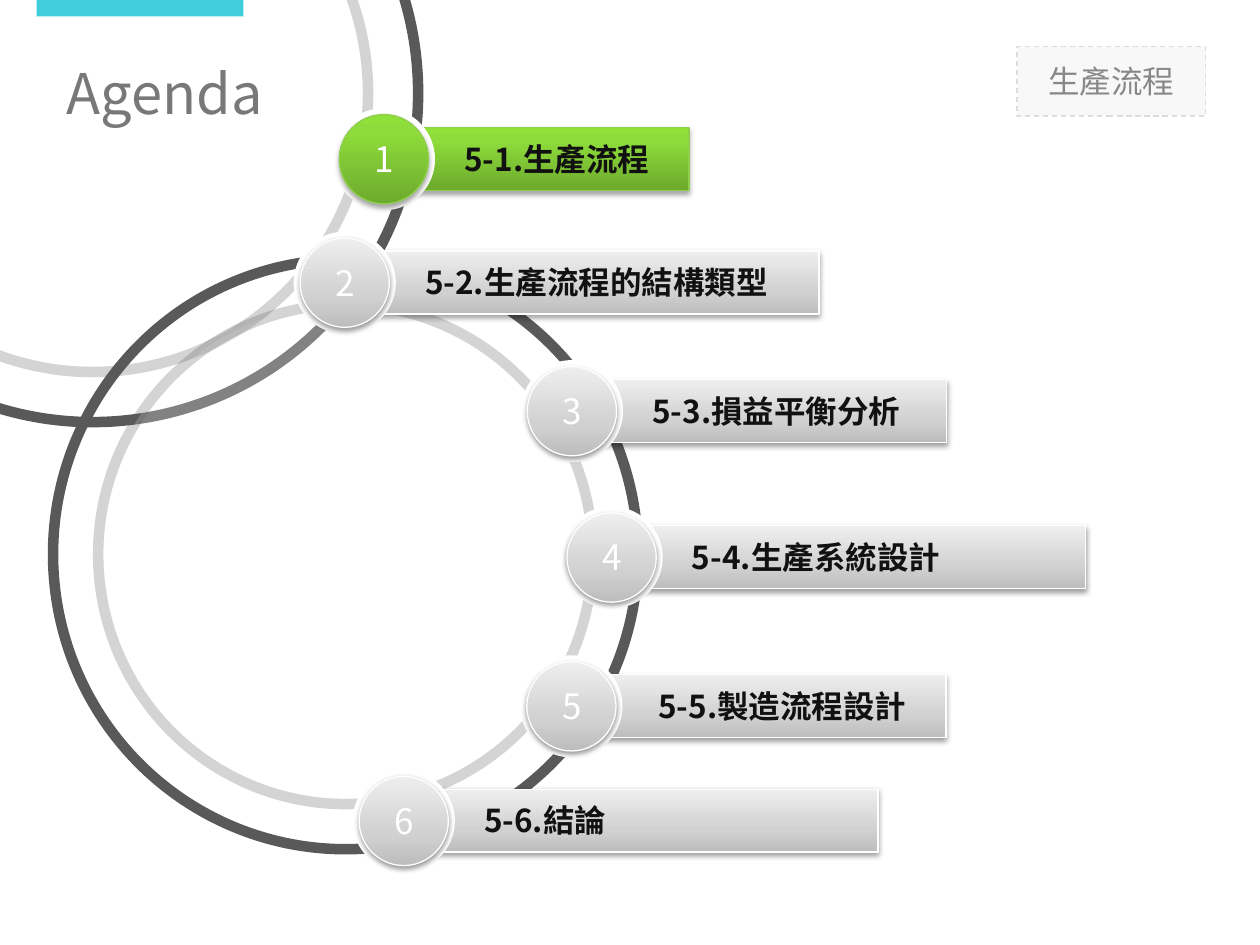
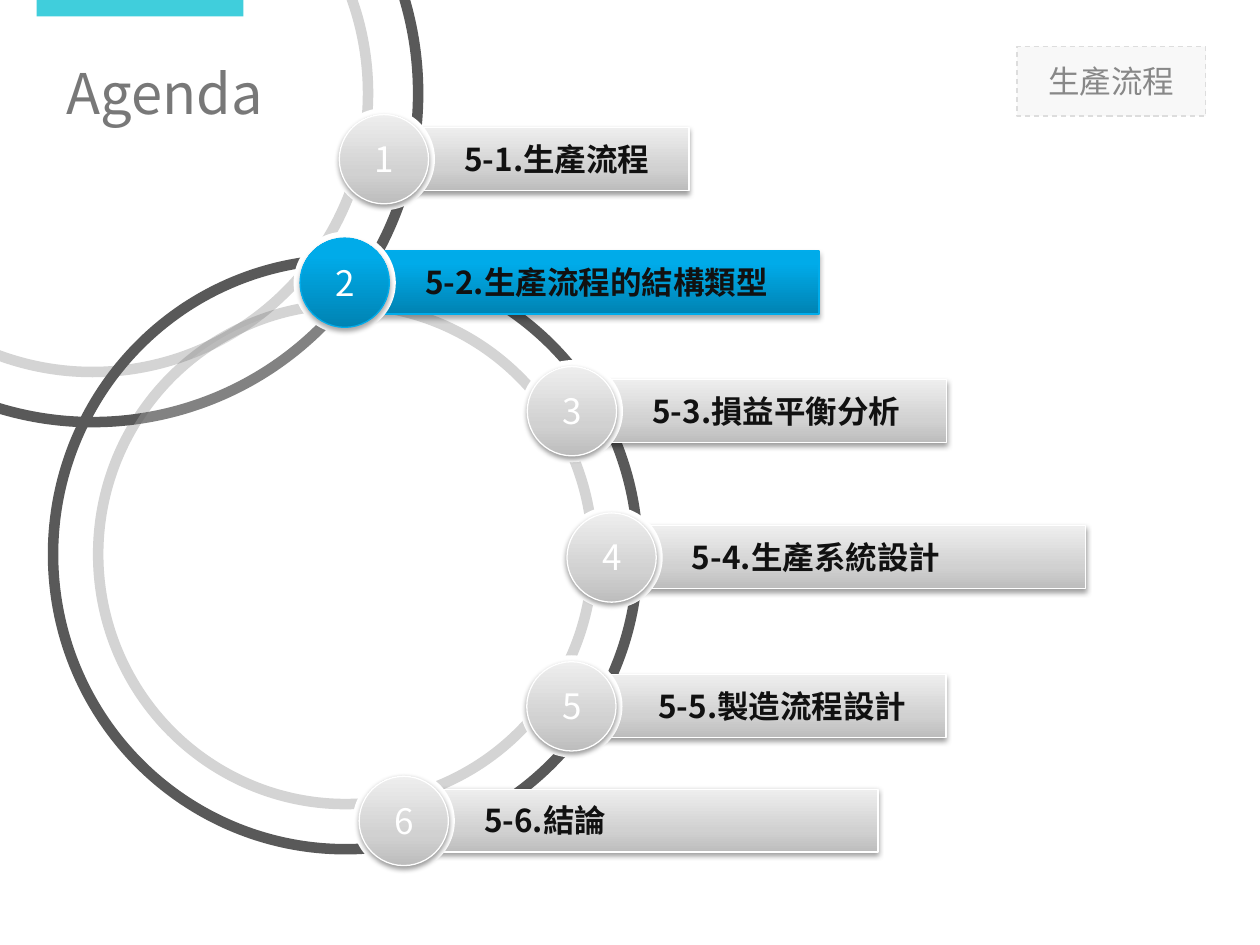
from lxml import etree
from pptx import Presentation
from pptx.dml.color import RGBColor
from pptx.enum.dml import MSO_LINE
from pptx.enum.shapes import MSO_SHAPE
from pptx.enum.text import MSO_ANCHOR, MSO_AUTO_SIZE, PP_ALIGN
from pptx.oxml.ns import qn
from pptx.util import Cm, Pt

RECT, OVAL = MSO_SHAPE.RECTANGLE, MSO_SHAPE.OVAL
LEFT, CENTER = PP_ALIGN.LEFT, PP_ALIGN.CENTER
MIDDLE, GROW, DASH = MSO_ANCHOR.MIDDLE, MSO_AUTO_SIZE.SHAPE_TO_FIT_TEXT, MSO_LINE.DASH
TITLE_ONLY = 5

FONT = "Noto Sans CJK SC"
INK, WHITE, MUTED = "111111", "FFFFFF", "888888"
ACCENT, RING = "00BED1", "595959"
TAG_FILL, TAG_LINE = "F8F8F8", "DDDDDD"

# Each style: gradient stops, outline, shadow opacity in %, shadow distance in pt
GRAY = ([(0, "BDBDBD"), (35, "D1D1D1"), (100, "EEEEEE")], WHITE, 38, 1.6)
GREEN = ([(0, "6DAA2D"), (80, "8EDC3B"), (100, "8FE038")], "8FCF4B", 35, 1.8)
BLUE = ([(0, "0083B3"), (80, "00ABE9"), (100, "00ABEA")], "00ACEB", 35, 1.8)

# Outer circle box and distance to the inner circle, in cm
RINGS = [((-4.7, -4.75, 13.13, 13.26), 1.01), ((1.07, 5.23, 11.79, 11.89), 0.91)]

# Label, left, top, bar width, label width, extra label indent, in cm
CHAPTERS = [
    ("5-1.生產流程", 6.71, 2.18, 5.99, 5.31, 0),
    ("5-2.生產流程的結構類型", 5.92, 4.67, 9.4, 7.75, 0),
    ("5-3.損益平衡分析", 10.5, 7.26, 7.39, 6.78, 0),
    ("5-4.生產系統設計", 11.3, 10.21, 9.4, 7.75, 0),
    ("5-5.製造流程設計", 10.49, 13.21, 7.39, 6.78, 0.13),
    ("5-6.結論", 7.11, 15.52, 9.4, 7.75, 0),
]


def rgb(color):
    return RGBColor.from_string(color)


def cm_box(*lengths):
    return [Cm(length) for length in lengths]


def fade(element, percent):
    """Make every plain colour inside the element partly transparent."""
    for color in element.iter(qn("a:srgbClr")):
        etree.SubElement(color, qn("a:alpha")).set("val", str(percent * 1000))


def write(frame, text, size, color, align=LEFT, bold=False):
    frame.word_wrap = True
    paragraph = frame.paragraphs[0]
    paragraph.text = text
    paragraph.alignment = align
    font = paragraph.font
    font.name, font.size, font.bold = FONT, Pt(size), bold
    font.color.rgb = rgb(color)
    defaults = paragraph._p.pPr.find(qn("a:defRPr"))
    etree.SubElement(defaults, qn("a:ea")).set("typeface", FONT)
    return paragraph


def add_text(shapes, box, *args, **kwargs):
    frame = shapes.add_textbox(*cm_box(*box)).text_frame
    write(frame, *args, **kwargs)
    frame.auto_size = GROW


def add_shape(shapes, kind, box, fill=None, line=None, width=0.75):
    shape = shapes.add_shape(kind, *cm_box(*box))
    shape.shadow.inherit = False
    if fill:
        shape.fill.solid()
        shape.fill.fore_color.rgb = rgb(fill)
    else:
        shape.fill.background()
    if line:
        shape.line.color.rgb = rgb(line)
        shape.line.width = Pt(width)
    else:
        shape.line.fill.background()
    return shape


def add_glossy(shapes, kind, box, style):
    """Shape with an upward gradient and a soft shadow below."""
    stops, outline, opacity, distance = style
    shape = add_shape(shapes, kind, box, line=outline)
    shape.fill.gradient()
    shape.fill.gradient_angle = 90
    properties = shape._element.spPr
    stop_list = properties.find(qn("a:gradFill")).find(qn("a:gsLst"))
    for old_stop in list(stop_list):
        stop_list.remove(old_stop)
    for position, color in stops:
        stop = etree.SubElement(stop_list, qn("a:gs"), pos=str(position * 1000))
        etree.SubElement(stop, qn("a:srgbClr"), val=color)
    shadow = etree.SubElement(
        properties.find(qn("a:effectLst")), qn("a:outerShdw"),
        blurRad=str(Pt(3.1)), dist=str(Pt(distance)), dir="5400000", rotWithShape="0")
    etree.SubElement(shadow, qn("a:srgbClr"), val="000000")
    fade(shadow, opacity)


def add_header(slide):
    # Title
    title = slide.shapes.title
    title.left, title.top, title.width, title.height = cm_box(1.09, 0.86, 17.27, 2.01)
    heading = write(title.text_frame, "Agenda", 32, INK)
    title.text_frame.vertical_anchor = MIDDLE
    fade(heading._p, 75)
    # Accent band and chapter tag
    add_shape(slide.shapes, RECT, (0.74, 0, 4.17, 0.33), ACCENT)
    tag = add_shape(slide.shapes, RECT, (20.5, 0.94, 3.81, 1.4), TAG_FILL, TAG_LINE)
    tag.line.dash_style = DASH
    write(tag.text_frame, "生產流程", 18, MUTED, CENTER)
    tag.text_frame.vertical_anchor = MIDDLE


def add_ring(slide, box, inset):
    left, top, width, height = box
    shapes = slide.shapes.add_group_shape().shapes
    add_shape(shapes, OVAL, box, line=RING, width=6)
    inner_box = (left + inset, top + inset, width - 2 * inset, height - 2 * inset)
    inner = add_shape(shapes, OVAL, inner_box, WHITE, RING, 6)
    fade(inner._element.spPr, 25)


def add_chapter(slide, number, chapter, style):
    label, left, top, bar_width, label_width, indent = chapter
    shapes = slide.shapes
    add_glossy(shapes, RECT, (left + 1.19, top + 0.39, bar_width, 1.27), style)
    add_shape(shapes, OVAL, (left, top, 2.06, 2.06), WHITE)
    add_glossy(shapes, OVAL, (left + 0.13, top + 0.13, 1.8, 1.8), style)
    add_text(shapes, (left, top + 0.47, 2.08, 1.12), str(number), 20, WHITE, CENTER)
    add_text(shapes, (left + 2.4 + indent, top + 0.51, label_width, 1.02),
             label, 18, INK, bold=True)


def add_agenda(prs, current, highlight):
    slide = prs.slides.add_slide(prs.slide_layouts[TITLE_ONLY])
    add_header(slide)
    for box, inset in RINGS:
        add_ring(slide, box, inset)
    for number, chapter in enumerate(CHAPTERS, 1):
        add_chapter(slide, number, chapter, highlight if number == current else GRAY)


def main():
    prs = Presentation()
    prs.slide_width, prs.slide_height = Cm(25.4), Cm(19.05)
    for current, highlight in enumerate((GREEN, BLUE), 1):
        add_agenda(prs, current, highlight)
    prs.save("out.pptx")


if __name__ == "__main__":
    main()
